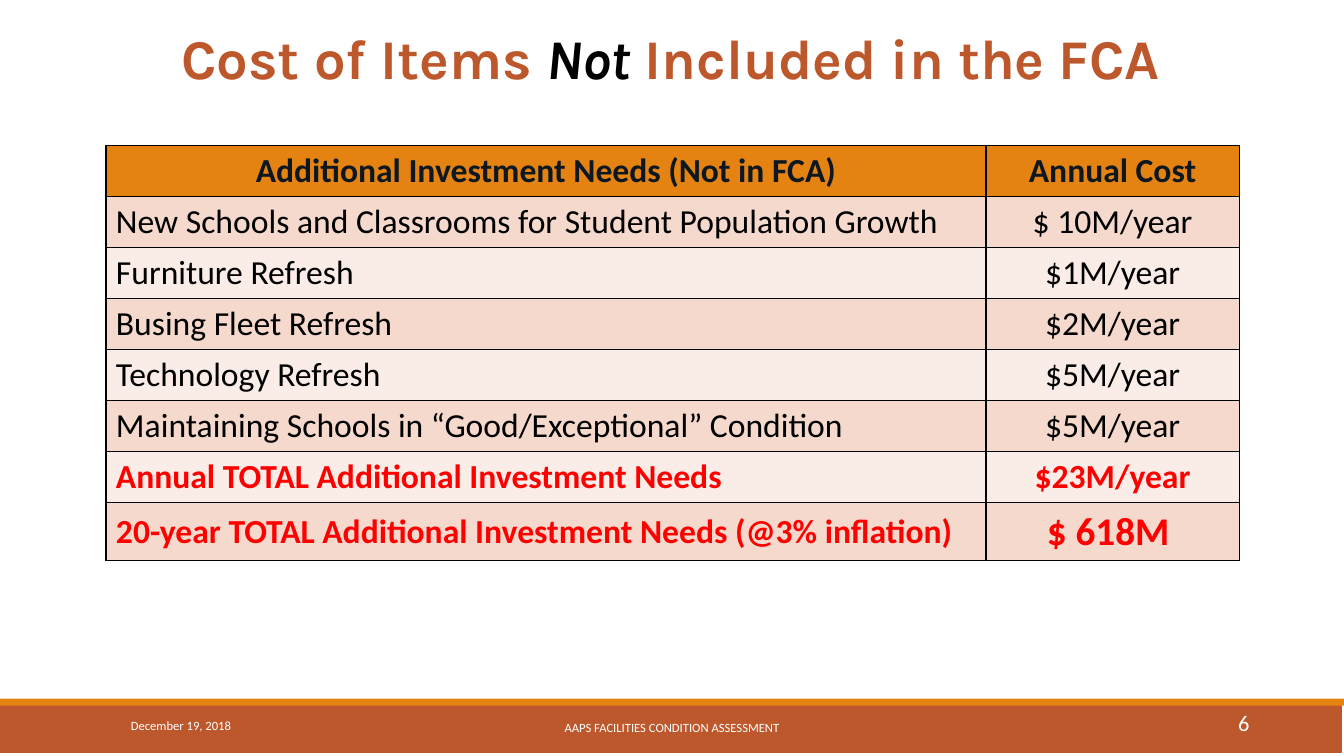
from dataclasses import dataclass

from lxml.etree import SubElement
from pptx import Presentation
from pptx.dml.color import RGBColor
from pptx.enum.shapes import MSO_SHAPE
from pptx.enum.text import MSO_ANCHOR, PP_ALIGN
from pptx.oxml.ns import qn
from pptx.util import Inches, Pt


@dataclass(frozen=True)
class Theme:
    rust: str = "BD582C"
    orange: str = "E48312"
    peach: str = "F5D9CC"
    blush: str = "FAEDE7"
    navy: str = "0D171F"
    black: str = "000000"
    white: str = "FFFFFF"
    red: str = "FF0000"
    heading_font: str = "Karla"
    body_font: str = "Calibri"
    title_size: int = 40
    table_size: int = 24
    total_size: int = 28
    number_size: int = 16
    footer_size: int = 9
    border_width: int = 1


@dataclass(frozen=True)
class Span:
    text: str
    size: int
    color: str
    font: str = Theme.body_font
    bold: bool = False
    italic: bool = False


class SlideBuilder:
    def __init__(self, deck, theme):
        self.deck = deck
        self.theme = theme
        self.slide = deck.slides.add_slide(deck.slide_layouts[6])

    def across(self, percent):
        return round(self.deck.slide_width * percent / 100)

    def down(self, percent):
        return round(self.deck.slide_height * percent / 100)

    def area(self, left, top, width, height):
        return self.across(left), self.down(top), self.across(width), self.down(height)

    def add_spans(self, para, spans, align):
        para.alignment = align
        for span in spans:
            run = para.add_run()
            run.text = span.text
            run.font.name = span.font
            run.font.size = Pt(span.size)
            run.font.bold = span.bold
            run.font.italic = span.italic
            run.font.color.rgb = RGBColor.from_string(span.color)

    def bar(self, area, color):
        shape = self.slide.shapes.add_shape(MSO_SHAPE.RECTANGLE, *self.area(*area))
        shape.shadow.inherit = False
        shape.fill.solid()
        shape.fill.fore_color.rgb = RGBColor.from_string(color)
        shape.line.fill.background()

    def text(self, area, spans, align=PP_ALIGN.LEFT, line_spacing=1.0):
        box = self.slide.shapes.add_textbox(*self.area(*area))
        frame = box.text_frame
        frame.word_wrap = True
        frame.vertical_anchor = MSO_ANCHOR.MIDDLE
        para = frame.paragraphs[0]
        para.line_spacing = line_spacing
        self.add_spans(para, spans, align)

    def border(self, cell):
        properties = cell._tc.get_or_add_tcPr()
        for side in ("a:lnL", "a:lnR", "a:lnT", "a:lnB"):
            line = SubElement(properties, qn(side), w=str(Pt(self.theme.border_width)))
            fill = SubElement(line, qn("a:solidFill"))
            SubElement(fill, qn("a:srgbClr"), val=self.theme.black)

    def table(self, left, top, columns, heights, rows):
        area = self.area(left, top, sum(columns), sum(heights))
        table = self.slide.shapes.add_table(len(rows), len(columns), *area).table
        for column, width in zip(table.columns, columns):
            column.width = self.across(width)
        for index, (row, height, spans) in enumerate(zip(table.rows, heights, rows)):
            row.height = self.down(height)
            header = index == 0
            band = self.theme.peach if index % 2 else self.theme.blush
            color = self.theme.orange if header else band
            for position, (cell, span) in enumerate(zip(row.cells, spans)):
                self.border(cell)
                cell.fill.solid()
                cell.fill.fore_color.rgb = RGBColor.from_string(color)
                cell.vertical_anchor = MSO_ANCHOR.TOP if header else MSO_ANCHOR.MIDDLE
                align = PP_ALIGN.CENTER if header or position else PP_ALIGN.LEFT
                self.add_spans(cell.text_frame.paragraphs[0], [span], align)


def cost_rows(theme):
    header = ("Additional Investment Needs (Not in FCA)", "Annual Cost")
    items = [
        ("New Schools and Classrooms for Student Population Growth", "$ 10M/year"),
        ("Furniture Refresh", "$1M/year"),
        ("Busing Fleet Refresh", "$2M/year"),
        ("Technology Refresh", "$5M/year"),
        ("Maintaining Schools in “Good/Exceptional” Condition", "$5M/year"),
    ]
    annual = ("Annual TOTAL Additional Investment Needs", "$23M/year")
    size = theme.table_size
    rows = [[Span(text, size, theme.navy, bold=True) for text in header]]
    rows += [[Span(text, size, theme.black) for text in item] for item in items]
    rows.append([Span(text, size, theme.red, bold=True) for text in annual])
    rows.append([
        Span("20-year TOTAL Additional Investment Needs (@3% inflation)",
             size, theme.red, bold=True),
        Span("$ 618M ", theme.total_size, theme.red, bold=True),
    ])
    return rows


def main():
    deck = Presentation()
    deck.slide_width = Inches(13.33)
    deck.slide_height = Inches(7.5)
    theme = Theme()
    page = SlideBuilder(deck, theme)

    page.bar((0, 92.93, 99.85, 6.67), theme.rust)
    page.bar((0, 92.4, 100, 0.93), theme.orange)

    title = [
        Span("Cost of Items ", theme.title_size, theme.rust, theme.heading_font, True),
        Span("Not", theme.title_size, theme.black, theme.heading_font, True, True),
        Span(" Included in the FCA", theme.title_size, theme.rust,
             theme.heading_font, True),
    ]
    page.text((1.13, 2.93, 97.52, 10.67), title, PP_ALIGN.CENTER, 0.85)

    rows = cost_rows(theme)
    heights = [6.76] * (len(rows) - 1) + [7.67]
    page.table(7.88, 19.2, (65.49, 18.83), heights, rows)

    footers = [
        ((9, 93.33, 20.26, 5.33), "December 19, 2018",
         theme.footer_size, PP_ALIGN.LEFT),
        ((30.23, 93.6, 39.53, 5.33), "AAPS FACILITIES CONDITION ASSESSMENT",
         theme.footer_size, PP_ALIGN.CENTER),
        ((82.97, 92.93, 10.73, 5.33), "6", theme.number_size, PP_ALIGN.RIGHT),
    ]
    for area, text, size, align in footers:
        page.text(area, [Span(text, size, theme.white)], align)

    deck.save("out.pptx")


if __name__ == "__main__":
    main()
